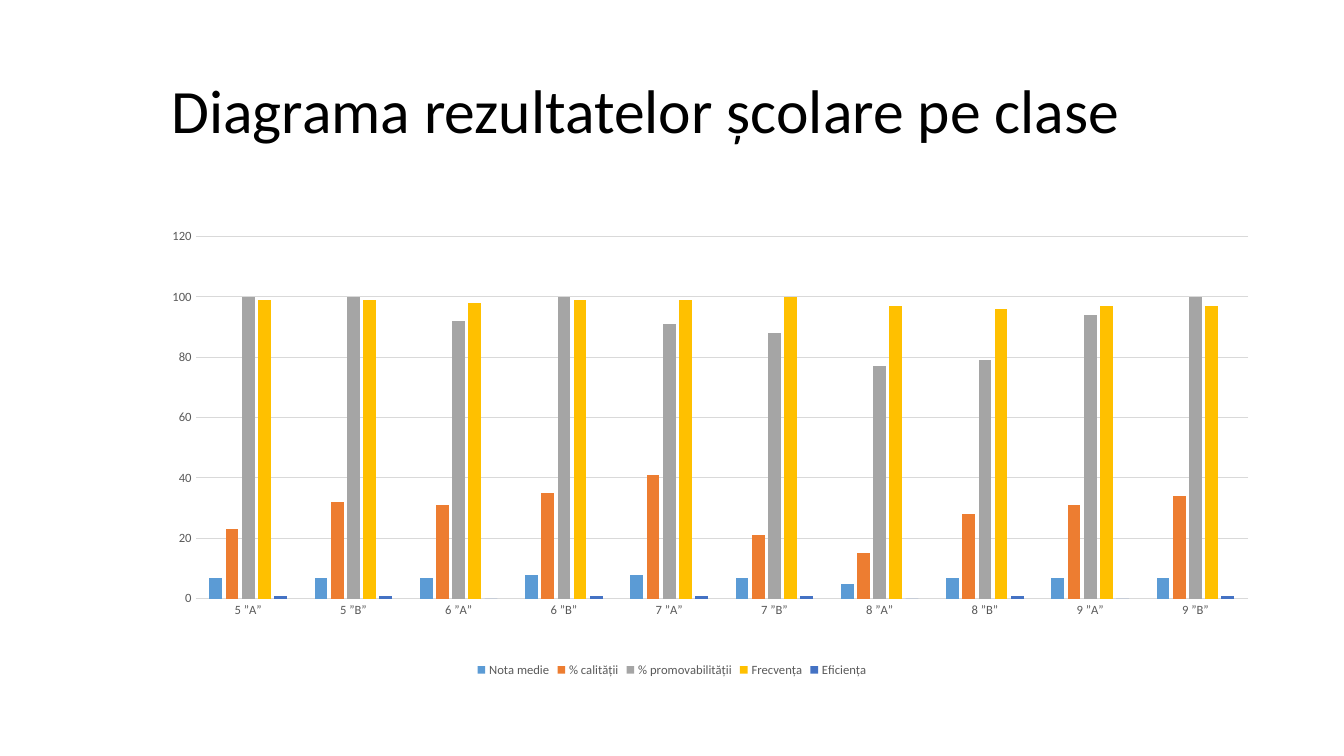
import pptx
import pptx.util
import pptx.oxml
import pptx.chart.data
import pptx.dml.color
import pptx.enum.chart
import pptx.enum.text

Pt = pptx.util.Pt
enum = pptx.enum.chart

TITLE = "Diagrama rezultatelor școlare pe clase"
FONT = "Calibri"
COLORS = {"title": "000000", "label": "595959", "grid": "D9D9D9"}
CLASSES = [f"{grade} ”{group}”" for grade in range(5, 10) for group in "AB"]
RESULTS = [
    ("Nota medie", "5B9BD5", (7, 7, 7, 8, 8, 7, 5, 7, 7, 7)),
    ("% calității", "ED7D31", (23, 32, 31, 35, 41, 21, 15, 28, 31, 34)),
    ("% promovabilității", "A5A5A5", (100, 100, 92, 100, 91, 88, 77, 79, 94, 100)),
    ("Frecvența", "FFC000", (99, 99, 98, 99, 99, 100, 97, 96, 97, 97)),
    ("Eficiența", "4472C4", (1, 1, 0, 1, 1, 1, 0, 1, 0, 1)),
]
LEFT, WIDTH = 66, 828
PLOT = {"x": 0.089, "y": 0.073, "w": 0.908, "h": 0.755}


def rgb(code):
    return pptx.dml.color.RGBColor.from_string(code)


def style(font, size, color):
    font.name = FONT
    font.size = Pt(size)
    font.color.rgb = rgb(color)


def rule(line):
    line.color.rgb = rgb(COLORS["grid"])
    line.width = Pt(0.75)


def add_title(slide):
    box = slide.shapes.add_textbox(Pt(LEFT), Pt(28.8), Pt(WIDTH), Pt(104.4))
    frame = box.text_frame
    frame.word_wrap = True
    frame.margin_left = Pt(56.5)
    frame.vertical_anchor = pptx.enum.text.MSO_ANCHOR.MIDDLE
    frame.text = TITLE
    line = frame.paragraphs[0]
    line.line_spacing = 0.9
    style(line.runs[0].font, 44, COLORS["title"])


def set_plot(chart):
    space = pptx.oxml.ns.nsdecls("c")
    modes = "".join(f'<c:{key}Mode val="edge"/>' for key in "xy")
    sizes = "".join(f'<c:{key} val="{val}"/>' for key, val in PLOT.items())
    layout = pptx.oxml.parse_xml(
        f'<c:layout {space}><c:manualLayout><c:layoutTarget val="inner"/>'
        f"{modes}{sizes}</c:manualLayout></c:layout>"
    )
    area = chart._chartSpace.chart.plotArea
    for old in area.findall(pptx.oxml.ns.qn("c:layout")):
        area.remove(old)
    area.insert(0, layout)


def add_results(slide):
    data = pptx.chart.data.CategoryChartData()
    data.categories = CLASSES
    for name, color, vals in RESULTS:
        data.add_series(name, vals)
    chart = slide.shapes.add_chart(
        enum.XL_CHART_TYPE.COLUMN_CLUSTERED,
        Pt(LEFT), Pt(144), Pt(WIDTH), Pt(342.7), data,
    ).chart
    chart.has_title = False
    style(chart.font, 10, COLORS["title"])
    chart.has_legend = True
    chart.legend.position = enum.XL_LEGEND_POSITION.BOTTOM
    chart.legend.include_in_layout = False
    style(chart.legend.font, 9, COLORS["label"])

    bars = chart.plots[0]
    bars.gap_width = 219
    bars.overlap = -27
    bars.vary_by_categories = False
    for series, (name, color, vals) in zip(bars.series, RESULTS):
        series.format.fill.solid()
        series.format.fill.fore_color.rgb = rgb(color)

    for axis in (chart.category_axis, chart.value_axis):
        axis.major_tick_mark = enum.XL_TICK_MARK.NONE
        axis.minor_tick_mark = enum.XL_TICK_MARK.NONE
        style(axis.tick_labels.font, 9, COLORS["label"])
    rule(chart.category_axis.format.line)
    scale = chart.value_axis
    scale.minimum_scale, scale.maximum_scale, scale.major_unit = 0, 120, 20
    scale.format.line.fill.background()
    scale.has_major_gridlines = True
    rule(scale.major_gridlines.format.line)
    set_plot(chart)


def main():
    deck = pptx.Presentation()
    deck.slide_width, deck.slide_height = Pt(960), Pt(540)
    slide = deck.slides.add_slide(deck.slide_layouts[6])
    add_title(slide)
    add_results(slide)
    deck.save("out.pptx")


if __name__ == "__main__":
    main()
